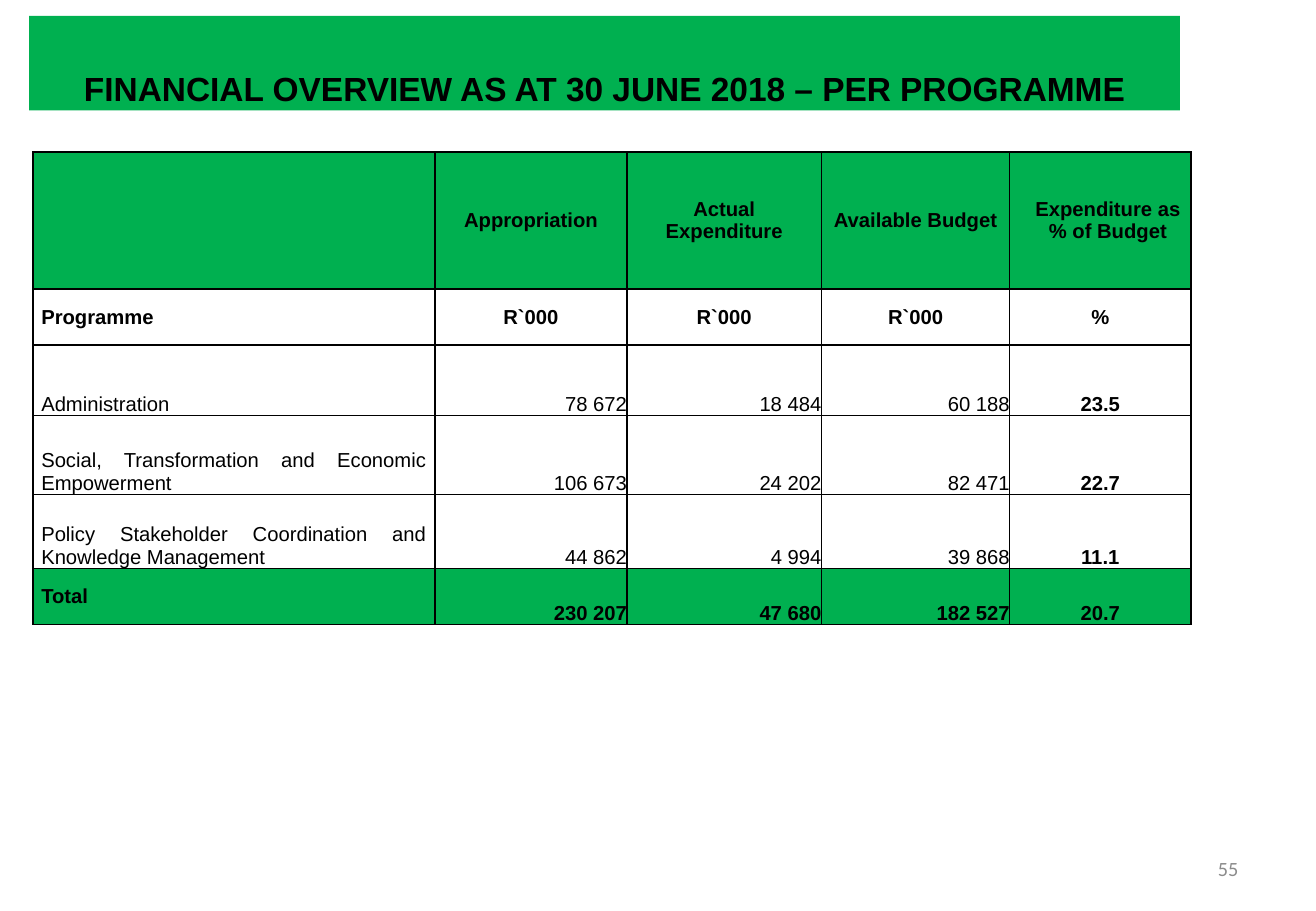
from lxml.etree import SubElement
from pptx import Presentation
from pptx.dml.color import RGBColor
from pptx.enum.shapes import MSO_SHAPE
from pptx.enum.text import MSO_ANCHOR as ANCHOR, PP_ALIGN as ALIGN
from pptx.oxml.ns import qn
from pptx.util import Inches, Pt

GREEN = RGBColor(0x00, 0xB0, 0x50)
BLACK = RGBColor(0x00, 0x00, 0x00)
GREY = RGBColor(0x8C, 0x8C, 0x8C)

COLUMN_WIDTHS = [3.31, 1.58, 1.6, 1.55, 1.49]
ROW_HEIGHTS = [1.13, 0.46, 0.58, 0.65, 0.61, 0.46]
BUDGET = [
    ["", "Appropriation", "Actual Expenditure", "Available Budget", " Expenditure as  % of Budget"],
    ["Programme", "R`000", "R`000", "R`000", "%"],
    ["Administration", "78 672", "18 484", "60 188", "23.5"],
    ["Social, Transformation and Economic Empowerment", "106 673", "24 202", "82 471", "22.7"],
    ["Policy Stakeholder Coordination and Knowledge Management", "44 862", "4 994", "39 868", "11.1"],
    ["Total", "230 207", "47 680", "182 527", "20.7"],
]
HEADER, UNITS, TOTAL = 0, 1, len(BUDGET) - 1
NAME, PERCENT = 0, len(COLUMN_WIDTHS) - 1


def style_paragraph(paragraph, text, size, align, bold=False, color=BLACK, font="Arial"):
    """Write one paragraph in a single style."""
    paragraph.text = text
    paragraph.alignment = align
    paragraph.font.name = font
    paragraph.font.size = Pt(size)
    paragraph.font.bold = bold
    paragraph.font.color.rgb = color


def add_title(slide, text):
    """Add the green title band."""
    band = slide.shapes.add_shape(
        MSO_SHAPE.RECTANGLE, Inches(0.24), Inches(0.13), Inches(9.47), Inches(0.78))
    band.shadow.inherit = False
    band.fill.solid()
    band.fill.fore_color.rgb = GREEN
    band.line.fill.background()
    frame = band.text_frame
    frame.word_wrap = True
    frame.vertical_anchor = ANCHOR.BOTTOM
    frame.margin_bottom = Inches(0.02)
    style_paragraph(frame.paragraphs[0], text, 19.8, ALIGN.CENTER, bold=True)


def add_page_number(slide, number):
    """Add the page number at the lower right."""
    box = slide.shapes.add_textbox(Inches(7.76), Inches(6.95), Inches(2.53), Inches(0.4))
    frame = box.text_frame
    frame.word_wrap = True
    frame.vertical_anchor = ANCHOR.MIDDLE
    style_paragraph(frame.paragraphs[0], number, 12, ALIGN.RIGHT, color=GREY, font="Calibri")


def add_borders(cell):
    """Draw thin black lines on all four sides of a cell."""
    properties = cell._tc.get_or_add_tcPr()
    for side in ("a:lnL", "a:lnR", "a:lnT", "a:lnB"):
        line = SubElement(properties, qn(side), w=str(Pt(1)))
        fill = SubElement(line, qn("a:solidFill"))
        SubElement(fill, qn("a:srgbClr"), val=str(BLACK))


def fill_cell(cell, row, column, text):
    """Write and format a cell according to its place in the table."""
    heading = row in (HEADER, UNITS)
    padded = heading or column == NAME
    cell.margin_left = cell.margin_right = Inches(0.07 if padded else 0)
    cell.margin_top = cell.margin_bottom = 0
    centred = heading or (row == TOTAL and column == NAME)
    cell.vertical_anchor = ANCHOR.MIDDLE if centred else ANCHOR.BOTTOM
    if column == NAME:
        align = ALIGN.JUSTIFY
    elif heading or column == PERCENT:
        align = ALIGN.CENTER
    else:
        align = ALIGN.RIGHT
    bold = heading or row == TOTAL or column == PERCENT
    paragraph = cell.text_frame.paragraphs[0]
    style_paragraph(paragraph, text, 12, align, bold)
    if row == HEADER and column == PERCENT:
        paragraph._p.get_or_add_pPr().set("marL", str(Inches(0.08)))
    add_borders(cell)
    if row in (HEADER, TOTAL):
        cell.fill.solid()
        cell.fill.fore_color.rgb = GREEN
    else:
        cell.fill.background()


def add_budget_table(slide):
    """Add the table of spending per programme."""
    table = slide.shapes.add_table(
        len(BUDGET), len(COLUMN_WIDTHS), Inches(0.27), Inches(1.25),
        Inches(sum(COLUMN_WIDTHS)), Inches(sum(ROW_HEIGHTS))).table
    table.first_row = table.horz_banding = False
    for column, width in zip(table.columns, COLUMN_WIDTHS):
        column.width = Inches(width)
    for row, height in zip(table.rows, ROW_HEIGHTS):
        row.height = Inches(height)
    for row, texts in enumerate(BUDGET):
        for column, text in enumerate(texts):
            fill_cell(table.cell(row, column), row, column, text)


def main():
    """Build the slide and save it."""
    presentation = Presentation()
    presentation.slide_width = Inches(10.83)
    presentation.slide_height = Inches(7.5)
    slide = presentation.slides.add_slide(presentation.slide_layouts[6])
    add_page_number(slide, "55")
    add_title(slide, "FINANCIAL OVERVIEW AS AT 30 JUNE 2018 – PER PROGRAMME")
    add_budget_table(slide)
    presentation.save("out.pptx")


if __name__ == "__main__":
    main()
